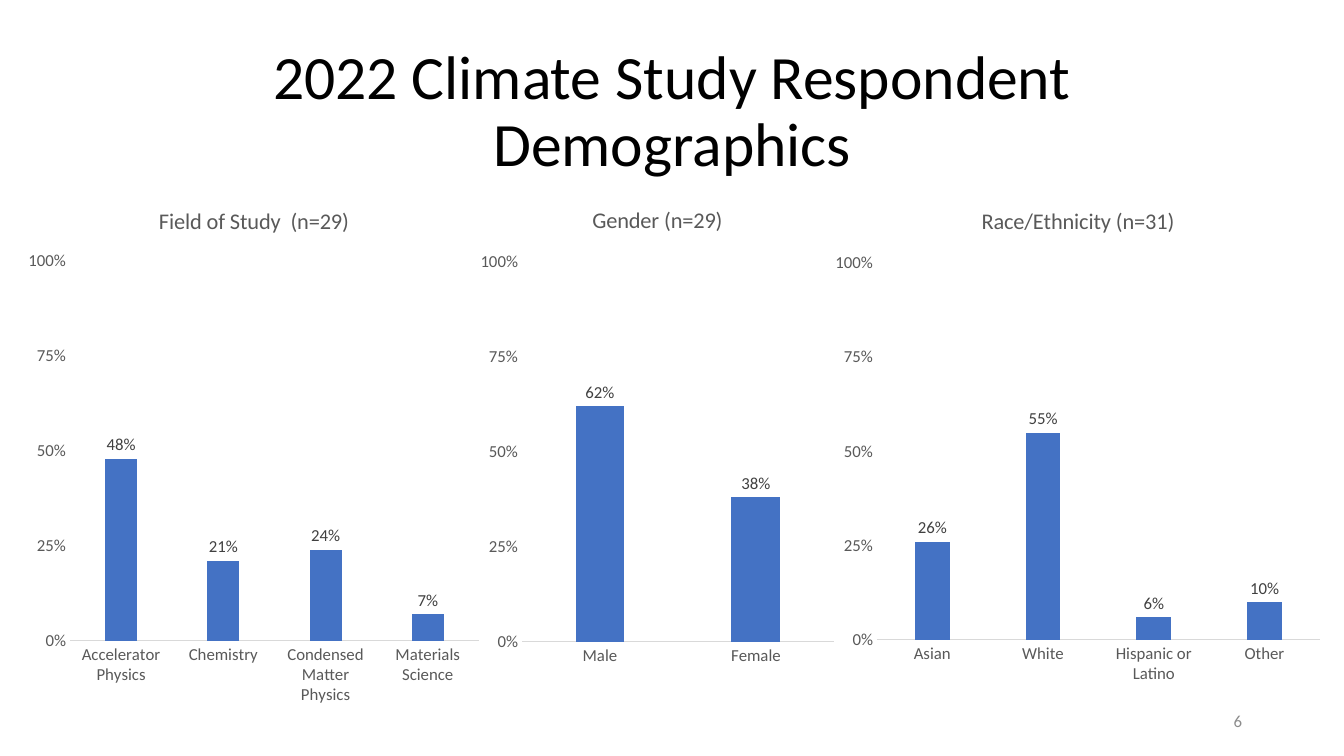
from lxml import etree
from pptx import Presentation
from pptx.chart.data import CategoryChartData
from pptx.dml.color import RGBColor
from pptx.enum.chart import XL_CHART_TYPE, XL_LABEL_POSITION, XL_TICK_MARK
from pptx.enum.text import MSO_ANCHOR, PP_ALIGN
from pptx.oxml.ns import qn
from pptx.util import Emu, Pt

COLUMN = XL_CHART_TYPE.COLUMN_CLUSTERED
OUTSIDE_END = XL_LABEL_POSITION.OUTSIDE_END
NO_TICK = XL_TICK_MARK.NONE
MIDDLE = MSO_ANCHOR.MIDDLE
CENTER, RIGHT = PP_ALIGN.CENTER, PP_ALIGN.RIGHT

FONT = "Calibri"
BLACK, GREY, LABEL_GREY = "000000", "595959", "404040"
NUMBER_GREY, AXIS_GREY, BLUE = "8C8C8C", "D9D9D9", "4472C4"

TITLE = "2022 Climate Study Respondent Demographics"
TITLE_BOX = (93, 40, 1159, 146)
PAGE_NUMBER = "6"
PAGE_NUMBER_BOX = (950, 701, 302, 40)

# Boxes are left, top, width, height on the slide; "plot" is the area inside the axes.
CHARTS = [
    {"title": "Field of Study  (n=29)",
     "box": (19, 186, 470, 529), "plot": (70, 261, 409, 380),
     "shares": {"Accelerator Physics": 0.48, "Chemistry": 0.21,
                "Condensed Matter Physics": 0.24, "Materials Science": 0.07}},
    {"title": "Gender (n=29)",
     "box": (473, 186, 369, 489), "plot": (522, 262, 312, 380),
     "shares": {"Male": 0.62, "Female": 0.38}},
    {"title": "Race/Ethnicity (n=31)",
     "box": (826, 186, 504, 508), "plot": (877, 263, 443, 377),
     "shares": {"Asian": 0.26, "White": 0.55,
                "Hispanic or Latino": 0.06, "Other": 0.10}},
]


def px(n):
    """Turn pixels into EMU."""
    return Emu(round(n * 914400 / 100.8))


def rgb(color):
    """Turn a hex string into a colour."""
    return RGBColor.from_string(color)


def style_font(font, size, color):
    """Set typeface, size and colour of a font."""
    font.name, font.size, font.bold = FONT, Pt(size), False
    font.color.rgb = rgb(color)


def set_text(sp, text, size, color, align):
    """Write one vertically centred paragraph into a shape."""
    tf = sp.text_frame
    tf.word_wrap = True
    tf.vertical_anchor = MIDDLE
    tf.text = text
    p = tf.paragraphs[0]
    p.alignment = align
    style_font(p.runs[0].font, size, color)
    return p


def place_plot(chart, box, plot):
    """Fix the inner plot area as fractions of the chart frame."""
    area = chart._chartSpace.chart.plotArea
    for old in area.findall(qn("c:layout")):
        area.remove(old)
    layout = etree.Element(qn("c:layout"))
    manual = etree.SubElement(layout, qn("c:manualLayout"))
    fractions = [("x", (plot[0] - box[0]) / box[2]), ("y", (plot[1] - box[1]) / box[3]),
                 ("w", plot[2] / box[2]), ("h", plot[3] / box[3])]
    settings = [("layoutTarget", "inner"), ("xMode", "edge"), ("yMode", "edge")]
    for tag, value in settings + fractions:
        etree.SubElement(manual, qn("c:" + tag)).set("val", str(value))
    area.insert(0, layout)


def style_axes(chart):
    """Format the category axis and the percentage axis."""
    cat, val = chart.category_axis, chart.value_axis
    for axis in (cat, val):
        axis.major_tick_mark = axis.minor_tick_mark = NO_TICK
        axis.has_major_gridlines = False
        style_font(axis.tick_labels.font, 12, GREY)
    cat.format.line.color.rgb = rgb(AXIS_GREY)
    cat.format.line.width = Pt(0.75)
    val.format.line.fill.background()
    val.minimum_scale, val.maximum_scale, val.major_unit = 0, 1, 0.25
    val.tick_labels.number_format = "0%"
    val.tick_labels.number_format_is_linked = False


def style_columns(plot):
    """Format the columns and their value labels."""
    plot.gap_width, plot.overlap, plot.vary_by_categories = 219, -27, False
    fill = plot.series[0].format.fill
    fill.solid()
    fill.fore_color.rgb = rgb(BLUE)
    plot.has_data_labels = True
    labels = plot.data_labels
    labels.show_value = True
    labels.position = OUTSIDE_END
    labels.number_format = "0%"
    labels.number_format_is_linked = False
    style_font(labels.font, 12, LABEL_GREY)


def add_column_chart(slide, title, box, plot, shares):
    """Add one demographic column chart."""
    data = CategoryChartData(number_format="0%")
    data.categories = list(shares)
    data.add_series("Series 1", list(shares.values()))
    chart = slide.shapes.add_chart(COLUMN, *map(px, box), data).chart
    style_font(chart.font, 10, BLACK)
    chart.has_legend = False
    chart.has_title = True
    tf = chart.chart_title.text_frame
    tf.text = title
    style_font(tf.paragraphs[0].runs[0].font, 16, GREY)
    chart.chart_title.include_in_layout = False
    place_plot(chart, box, plot)
    style_axes(chart)
    style_columns(chart.plots[0])


prs = Presentation()
prs.slide_width, prs.slide_height = px(1344), px(756)
slide = prs.slides.add_slide(prs.slide_layouts[5])

title = slide.shapes.title
title.left, title.top, title.width, title.height = map(px, TITLE_BOX)
set_text(title, TITLE, 44, BLACK, CENTER).line_spacing = 0.9

number = slide.shapes.add_textbox(*map(px, PAGE_NUMBER_BOX))
set_text(number, PAGE_NUMBER, 12, NUMBER_GREY, RIGHT)

for chart_spec in CHARTS:
    add_column_chart(slide, **chart_spec)

prs.save("out.pptx")
